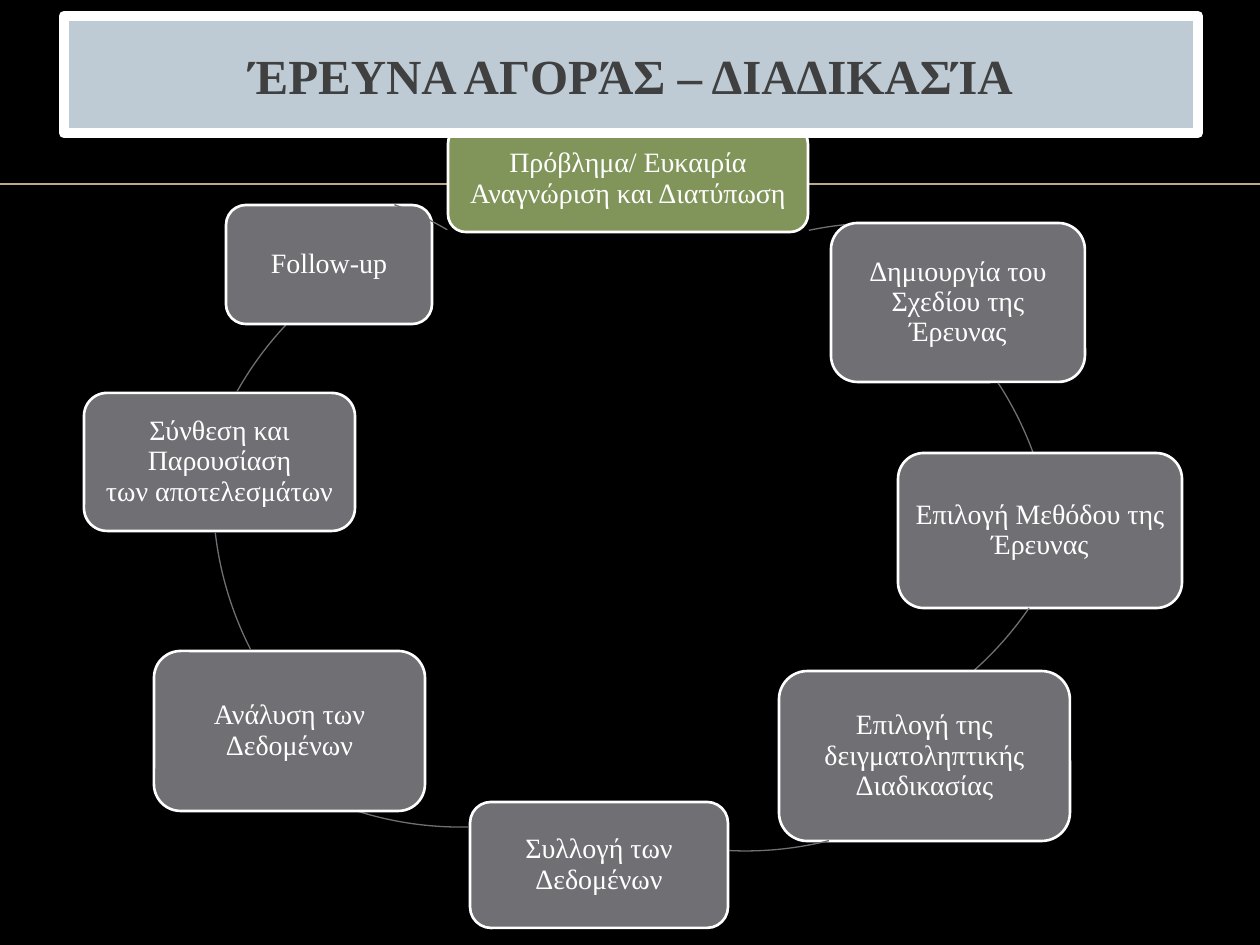
from dataclasses import dataclass

from lxml.etree import SubElement
from pptx import Presentation
from pptx.dml.color import RGBColor as Rgb
from pptx.enum.shapes import MSO_CONNECTOR as Conn, MSO_SHAPE as Kind
from pptx.enum.text import MSO_ANCHOR as Anchor, PP_ALIGN as Align
from pptx.oxml.ns import qn
from pptx.util import Pt

SCALE = 914400 / 126
RING = 685
WHITE, GREY, GREEN = "FFFFFF", "6F6F74", "81955B"
FRAME = {
    "word_wrap": True,
    "vertical_anchor": Anchor.MIDDLE,
    "margin_left": round(8 * SCALE),
    "margin_right": round(8 * SCALE),
    "margin_top": round(8 * SCALE),
    "margin_bottom": round(8 * SCALE),
}
STEP_PARA = {"alignment": Align.CENTER, "line_spacing": 0.9}
HEAD_PARA = {"alignment": Align.CENTER, "space_before": Pt(4)}
STEP_FONT = {"name": "Times New Roman", "size": Pt(16)}
HEAD_FONT = {"name": "Times New Roman", "size": Pt(28), "bold": True}


@dataclass
class Box:
    text: str
    left: int
    top: int
    width: int
    height: int
    fill: str = GREY


@dataclass
class Arc:
    left: int
    top: int
    start: float
    end: float


STEPS = [
    (Box("Πρόβλημα/ Ευκαιρία Αναγνώριση και Διατύπωση",
         448, 126, 360, 106, GREEN), Arc(537, 223, 258.1, 271.3)),
    (Box("Δημιουργία του Σχεδίου της Έρευνας", 831, 223, 254, 159),
     Arc(369, 228, 326.8, 339.8)),
    (Box("Επιλογή Μεθόδου της Έρευνας", 898, 453, 284, 155),
     Arc(404, 72, 34.4, 48.3)),
    (Box("Επιλογή της δειγματοληπτικής Διαδικασίας", 779, 671, 291, 170),
     Arc(403, 166, 75.9, 92.7)),
    (Box("Συλλογή των Δεδομένων", 470, 802, 258, 126),
     Arc(118, 142, 88.7, 108)),
    (Box("Ανάλυση των Δεδομένων", 154, 651, 271, 160),
     Arc(213, 151, 152.9, 173.4)),
    (Box("Σύνθεση και Παρουσίαση\vτων αποτελεσμάτων", 84, 393, 271, 138),
     Arc(193, 217, 209.3, 223.2)),
    (Box("Follow-up", 226, 205, 206, 119), Arc(-68, 183, 290.5, 300.3)),
]
TITLE = Box("ΈΡΕΥΝΑ ΑΓΟΡΆΣ – ΔΙΑΔΙΚΑΣΊΑ", 64, 16, 1134, 117, "BECBD5")


def px(*vals: int) -> list[int]:
    return [round(val * SCALE) for val in vals]


def paint(fill, tint: str) -> None:
    fill.solid()
    fill.fore_color.rgb = Rgb.from_string(tint)


def apply(item, vals: dict) -> None:
    for key, val in vals.items():
        setattr(item, key, val)


def edge(shape, tint: str, width: float) -> None:
    paint(shape.line.fill, tint)
    shape.line.width = Pt(width)


def draw_box(slide, box: Box, kind, width: float, tint: str,
             para: dict, font: dict) -> None:
    shape = slide.shapes.add_shape(
        kind, *px(box.left, box.top, box.width, box.height))
    shape.shadow.inherit = False
    paint(shape.fill, box.fill)
    edge(shape, WHITE, width)
    frame = shape.text_frame
    apply(frame, FRAME)
    frame.text = box.text
    first = frame.paragraphs[0]
    apply(first, para)
    for run in first.runs:
        apply(run.font, font)
        paint(run.font.fill, tint)


def draw_arc(slide, arc: Arc) -> None:
    shape = slide.shapes.add_shape(
        Kind.ARC, *px(arc.left, arc.top, RING, RING))
    shape.shadow.inherit = False
    shape.fill.background()
    edge(shape, GREY, 0.75)
    for idx, angle in enumerate((arc.start, arc.end)):
        shape.adjustments[idx] = angle * 0.6


def draw_rule(slide) -> None:
    rule = slide.shapes.add_connector(
        Conn.STRAIGHT, *px(0, 184, 1260, 184))
    edge(rule, "BBAA8A", 1)
    SubElement(rule._element.spPr, qn("a:effectLst"))


def main() -> None:
    deck = Presentation()
    deck.slide_width, deck.slide_height = px(1260, 945)
    slide = deck.slides.add_slide(deck.slide_layouts[6])
    paint(slide.background.fill, "000000")
    draw_rule(slide)
    for box, arc in STEPS:
        draw_box(slide, box, Kind.ROUNDED_RECTANGLE, 1.5, WHITE,
                 STEP_PARA, STEP_FONT)
        draw_arc(slide, arc)
    draw_box(slide, TITLE, Kind.RECTANGLE, 6, "404040", HEAD_PARA, HEAD_FONT)
    deck.save("out.pptx")


if __name__ == "__main__":
    main()
